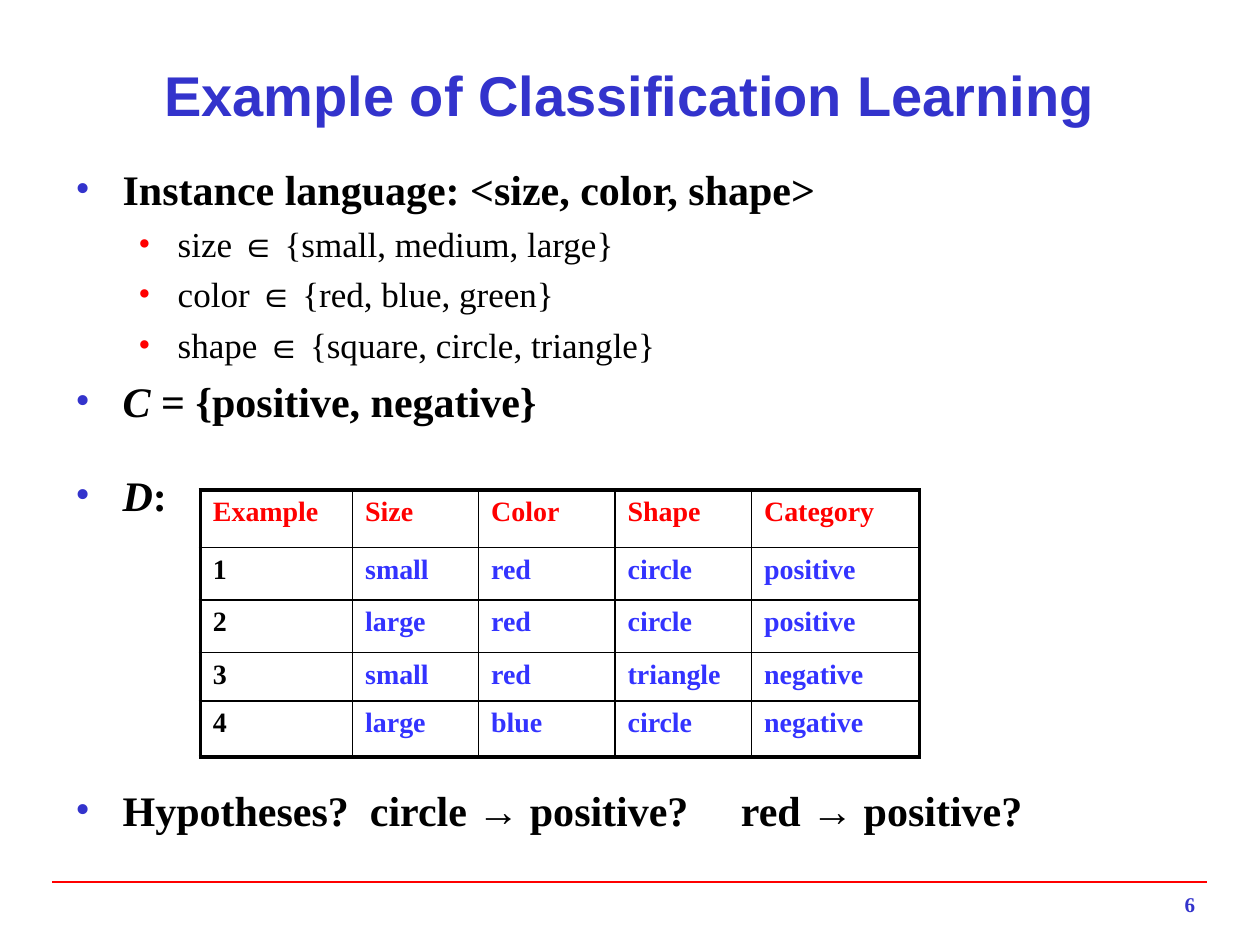
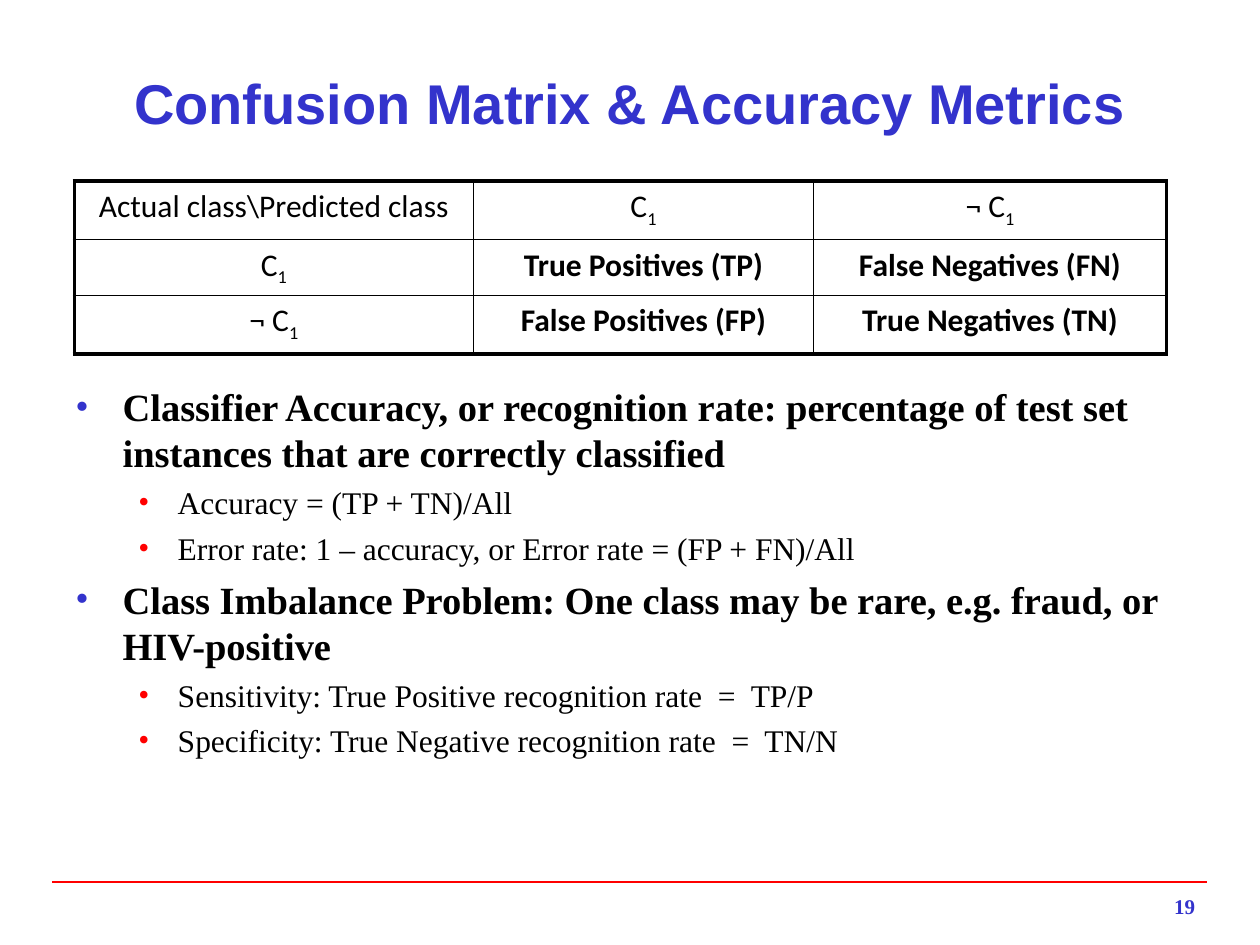
from dataclasses import dataclass

from lxml import etree
from pptx import Presentation
from pptx.dml.color import RGBColor
from pptx.enum import shapes, text
from pptx.oxml import ns
from pptx.util import Pt


@dataclass(frozen=True)
class Theme:
    title_blue: str = "3333CC"
    value_blue: str = "3333FF"
    red: str = "FF0000"
    black: str = "000000"
    title_font: str = "Arial"
    body_font: str = "Times New Roman"
    matrix_font: str = "Calibri"
    title_size: int = 32
    number_size: int = 12
    space_ratio: float = 0.24
    thin: float = 1
    thick: float = 2.25


THEME = Theme()
LEFT, CENTER, RIGHT = text.PP_ALIGN.LEFT, text.PP_ALIGN.CENTER, text.PP_ALIGN.RIGHT


def add_xml(parent, tag, position=None, **attributes):
    """Add a DrawingML child to parent, at the end unless a position is given."""
    element = etree.Element(ns.qn(tag), attributes)
    parent.insert(len(parent) if position is None else position, element)
    return element


def write_paragraph(paragraph, content, size, font, color, bold=False, align=LEFT, space=0):
    """Fill a paragraph with a string or with (text, "plain" | "italic" | "sub") pairs."""
    paragraph.alignment = align
    paragraph.space_before = Pt(space)
    paragraph.font.size = Pt(size)
    paragraph.font.name = font
    paragraph.font.bold = bold
    paragraph.font.color.rgb = RGBColor.from_string(color)
    for words, kind in [(content, "plain")] if isinstance(content, str) else content:
        run = paragraph.add_run()
        run.text = words
        if kind == "italic":
            run.font.italic = True
        elif kind == "sub":
            run._r.get_or_add_rPr().set("baseline", "-25000")


C1 = [("C", "plain"), ("1", "sub")]
NOT_C1 = [("¬ C", "plain"), ("1", "sub")]

# Body items are (level, content, space before or None for the usual space).
SLIDES = [
    dict(
        title="Example of Classification Learning",
        title_top=30,
        number="6",
        number_top=506,
        body_box=(36, 90, 648, 405),
        level_sizes=(24, 20),
        body=[
            (0, "Instance language: <size, color, shape>", None),
            (1, "size ∈ {small, medium, large}", None),
            (1, "color ∈ {red, blue, green}", None),
            (1, "shape ∈ {square, circle, triangle}", None),
            (0, [("C ", "italic"), ("= {positive, negative}", "plain")], None),
            (0, [("D", "italic"), (":", "plain")], 25),
            (0, "Hypotheses?  circle → positive?     red → positive?", 151),
        ],
        table_at=(114.5, 280),
        columns=(87, 72, 78, 78, 96),
        row_heights=(33, 30, 30, 27.5, 32),
        cells=[
            ["Example", "Size", "Color", "Shape", "Category"],
            ["1", "small", "red", "circle", "positive"],
            ["2", "large", "red", "circle", "positive"],
            ["3", "small", "red", "triangle", "negative"],
            ["4", "large", "blue", "circle", "negative"],
        ],
        cell_size=16,
        cell_font=THEME.body_font,
        cell_align=LEFT,
        header_color=THEME.red,
        value_color=THEME.value_blue,
        bold_headers=True,
    ),
    dict(
        title="Confusion Matrix & Accuracy Metrics",
        title_top=34.5,
        number="19",
        number_top=507,
        body_box=(36, 215.5, 648, 265),
        level_sizes=(22, 18),
        body=[
            (0, "Classifier Accuracy, or recognition rate: percentage of test set "
                "instances that are correctly classified", None),
            (1, "Accuracy = (TP + TN)/All", None),
            (1, "Error rate: 1 – accuracy, or Error rate = (FP + FN)/All", None),
            (0, "Class Imbalance Problem: One class may be rare, e.g. fraud, or "
                "HIV-positive", None),
            (1, "Sensitivity: True Positive recognition rate  =  TP/P", None),
            (1, "Specificity: True Negative recognition rate  =  TN/N", None),
        ],
        table_at=(42.5, 103.5),
        columns=(228, 194.5, 201.5),
        row_heights=(33.5, 31.5, 33.5),
        cells=[
            ["Actual class\\Predicted class", C1, NOT_C1],
            [C1, "True Positives (TP)", "False Negatives (FN)"],
            [NOT_C1, "False Positives (FP)", "True Negatives (TN)"],
        ],
        cell_size=18,
        cell_font=THEME.matrix_font,
        cell_align=CENTER,
        header_color=THEME.black,
        value_color=THEME.black,
        bold_headers=False,
    ),
]

presentation = Presentation()
presentation.slide_width, presentation.slide_height = Pt(720), Pt(540)

for content in SLIDES:
    slide = presentation.slides.add_slide(presentation.slide_layouts[6])

    footer_rule = slide.shapes.add_connector(
        shapes.MSO_CONNECTOR.STRAIGHT, Pt(30), Pt(504), Pt(690), Pt(504))
    footer_rule.line.color.rgb = RGBColor.from_string(THEME.red)
    footer_rule.line.width = Pt(THEME.thin)
    add_xml(footer_rule._element.spPr, "a:effectLst")

    number_box = slide.shapes.add_textbox(Pt(540), Pt(content["number_top"]), Pt(150), Pt(21))
    number_box.text_frame.word_wrap = True
    write_paragraph(number_box.text_frame.paragraphs[0], content["number"],
                    THEME.number_size, THEME.body_font, THEME.title_blue, True, RIGHT)

    title_box = slide.shapes.add_textbox(Pt(36), Pt(content["title_top"]), Pt(648), Pt(48))
    title_box.text_frame.word_wrap = True
    title_box.text_frame.vertical_anchor = text.MSO_ANCHOR.MIDDLE
    write_paragraph(title_box.text_frame.paragraphs[0], content["title"],
                    THEME.title_size, THEME.title_font, THEME.title_blue, True, CENTER)

    body_frame = slide.shapes.add_textbox(*map(Pt, content["body_box"])).text_frame
    body_frame.word_wrap = True
    for index, (level, words, space) in enumerate(content["body"]):
        paragraph = body_frame.add_paragraph() if index else body_frame.paragraphs[0]
        paragraph.level = level
        margin, hanging = ((27, 27), (58.5, 22.5))[level]
        properties = paragraph._p.get_or_add_pPr()
        properties.set("marL", str(Pt(margin)))
        properties.set("indent", str(-Pt(hanging)))
        bullet_color = add_xml(properties, "a:buClr")
        add_xml(bullet_color, "a:srgbClr", val=(THEME.title_blue, THEME.red)[level])
        add_xml(properties, "a:buFont", typeface=THEME.body_font)
        add_xml(properties, "a:buChar", char="•")
        size = content["level_sizes"][level]
        if space is None:
            space = round(size * THEME.space_ratio, 1)
        write_paragraph(paragraph, words, size, THEME.body_font, THEME.black,
                        bold=level == 0, space=space)

    columns, row_heights = content["columns"], content["row_heights"]
    table = slide.shapes.add_table(
        len(row_heights), len(columns), *map(Pt, content["table_at"]),
        Pt(sum(columns)), Pt(sum(row_heights))).table
    table.first_row = table.horz_banding = False
    for column, width in zip(table.columns, columns):
        column.width = Pt(width)
    for row, height in zip(table.rows, row_heights):
        row.height = Pt(height)

    last_row, last_column = len(row_heights) - 1, len(columns) - 1
    for r, row_words in enumerate(content["cells"]):
        for c, words in enumerate(row_words):
            cell = table.cell(r, c)
            cell.fill.background()
            cell.margin_left = cell.margin_right = Pt(7.2)
            cell.margin_top = cell.margin_bottom = Pt(3.6)
            if r == 0:
                color = content["header_color"]
            else:
                color = content["value_color"] if c else THEME.black
            write_paragraph(cell.text_frame.paragraphs[0], words, content["cell_size"],
                            content["cell_font"], color,
                            bold=content["bold_headers"] or (r > 0 and c > 0),
                            align=content["cell_align"],
                            space=round(content["cell_size"] * THEME.space_ratio, 1))
            outer_sides = {"a:lnL": c == 0, "a:lnR": c == last_column,
                           "a:lnT": r == 0, "a:lnB": r == last_row}
            for position, (side, is_outer) in enumerate(outer_sides.items()):
                border_width = THEME.thick if is_outer else THEME.thin
                border = add_xml(cell._tc.get_or_add_tcPr(), side, position,
                                 w=str(Pt(border_width)))
                border_fill = add_xml(border, "a:solidFill")
                add_xml(border_fill, "a:srgbClr", val=THEME.black)

presentation.save("out.pptx")
